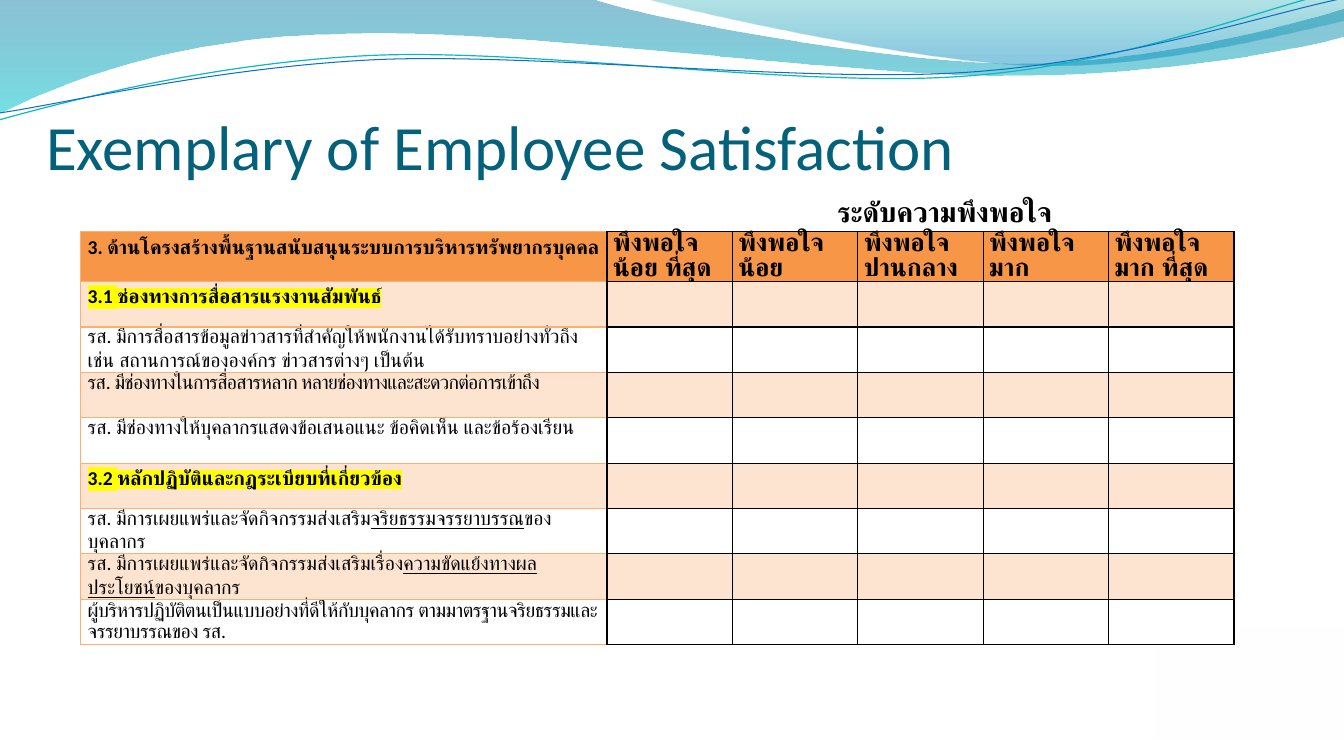
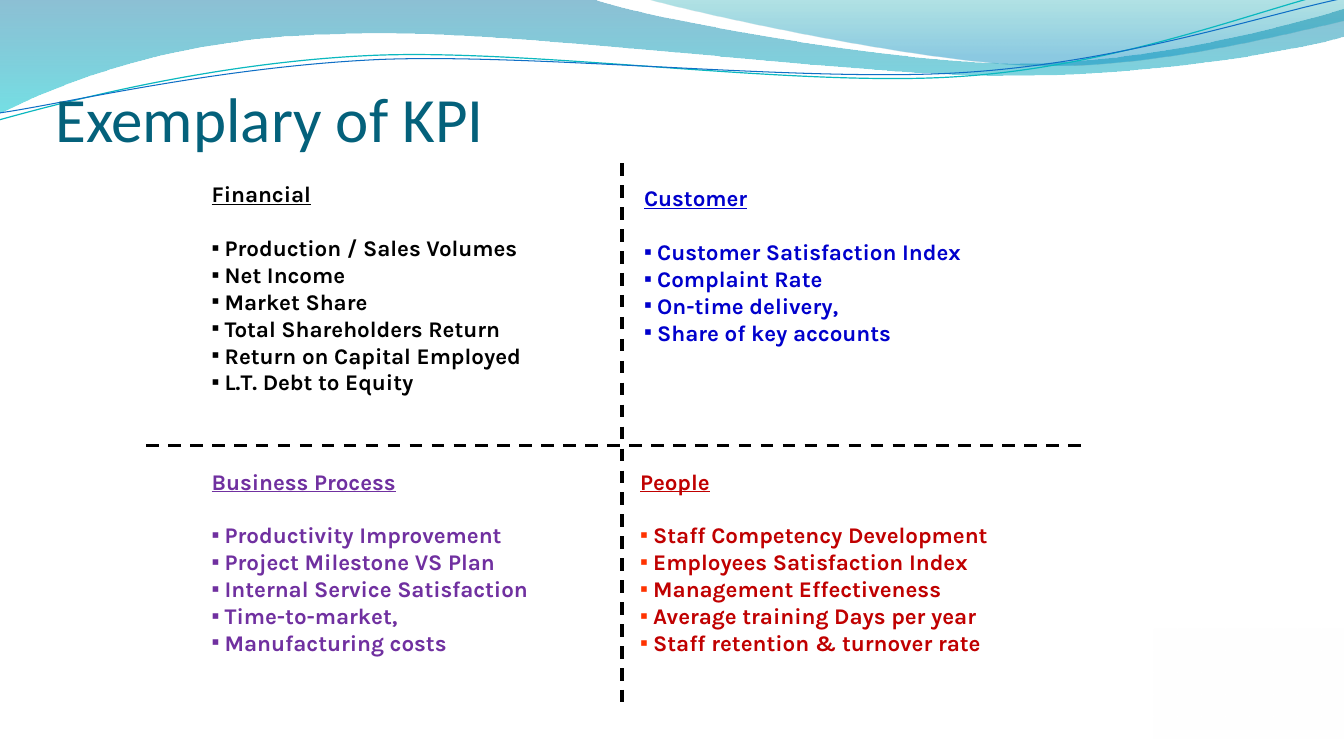
import math
import pptx
import pptx.dml.color
import pptx.enum.dml
import pptx.enum.lang
import pptx.enum.shapes
import pptx.enum.text
import pptx.oxml.ns
import pptx.util
from dataclasses import dataclass
from lxml import etree

Inches, Pt = pptx.util.Inches, pptx.util.Pt
RGB = pptx.dml.color.RGBColor.from_string
ANCHOR = pptx.enum.text.MSO_ANCHOR
ALIGN = pptx.enum.text.PP_ALIGN
THAI = pptx.enum.lang.MSO_LANGUAGE_ID.THAI
qn = pptx.oxml.ns.qn


@dataclass(frozen=True)
class Theme:
    title: str = "04617B"
    ink: str = "000000"
    paper: str = "FFFFFF"
    head: str = "F79646"
    band: str = "FDE4D0"
    edge: str = "F9B074"
    mark: str = "FFFF00"
    blue: str = "0000CC"
    plum: str = "7030A0"
    red: str = "C00000"
    spot: str = "FF3300"
    sans: str = "Calibri"
    serif: str = "Cambria"
    list: str = "Karla"
    bullet: str = "Arial"
    big: int = 45
    sub: int = 20
    level: int = 18
    body: int = 16
    small: int = 14


T = Theme()

# Each wave: start point, then straight (2 numbers) or cubic (6 numbers) steps,
# then gradient stops as position, colour, opacity
WAVES = [
    ([(0, 0), (5.87, -0.01), (6.34, 0.17, 8.85, 0.63, 10.11, 0.63),
      (11.38, 0.63, 12.78, 0.26, 13.33, 0.09), (13.35, 0.36),
      (13.11, 0.44, 11.6, 0.76, 9.94, 0.75), (8.29, 0.75, 5.09, 0.28, 3.43, 0.34),
      (1.72, 0.36, 0.61, 0.83, -0.01, 1.13), (0, 0)],
     [(0, "0074A1", 45), (1, "00C6CF", 55)]),
    ([(6.39, -0.01), (6.79, 0.11, 9.09, 0.62, 10.25, 0.65),
      (11.41, 0.69, 12.82, 0.32, 13.33, 0.21), (13.33, 0), (6.39, -0.01)],
     [(0, "00A1A9", 30), (0.8, "008BBF", 45)]),
]
# Each thread: points, colour, width, centre of its turn
THREADS = [
    ([(-0.01, 1.19), (0.64, 1.01, 2.11, 0.62, 3.69, 0.55),
      (5.27, 0.48, 7.9, 0.87, 9.5, 0.76), (11.1, 0.66, 12.52, 0.08, 13.31, -0.1)],
     "0AB8BF", 0.85, (6.65, 0.58)),
    ([(0, 1.12), (0.63, 1.03, 2.18, 0.66, 3.78, 0.59),
      (5.37, 0.53, 7.96, 0.82, 9.55, 0.72), (11.15, 0.62, 12.55, 0.14, 13.34, -0.02)],
     "0F6FC6", 0.75, (6.67, 0.59)),
]
TILT = 2.7


def put(item, **vals):
    """Set several attributes of one object."""
    for name, val in vals.items():
        setattr(item, name, val)


def turn(steps, mid):
    """Turn all points by TILT degrees about mid."""
    cos, sin = math.cos(math.radians(TILT)), math.sin(math.radians(TILT))
    out = []
    for step in steps:
        flat = []
        for x, y in zip(step[::2], step[1::2]):
            dx, dy = x - mid[0], y - mid[1]
            flat += [mid[0] + dx * cos - dy * sin, mid[1] + dx * sin + dy * cos]
        out.append(flat)
    return out


class Deck:
    def __init__(self):
        self.file = pptx.Presentation()
        put(self.file, slide_width=Inches(13.33), slide_height=Inches(7.5))
        self.slide = None

    def page(self, title, x, y, w):
        self.slide = self.file.slides.add_slide(self.file.slide_layouts[6])
        for steps, stops in WAVES:
            self.fade(self.curve(steps, True), stops)
        for steps, color, width, mid in THREADS:
            shape = self.curve(turn(steps, mid), False)
            shape.rotation = 360 - TILT
            shape.fill.background()
            shape.line.color.rgb = RGB(color)
            shape.line.width = Pt(width)
        veil = self.slide.shapes.add_shape(
            pptx.enum.shapes.MSO_SHAPE.RECTANGLE, *map(Inches, (11.44, 6.24, 1.9, 1.09)))
        self.fade(veil, [(0, T.paper, 40), (1, T.paper, 70)])
        par = self.box(x, y, w, 0.78).paragraphs[0]
        par.line_spacing = 0.9
        self.run(par, title, T.big, T.sans, T.title)

    def curve(self, steps, close):
        """Draw an outline, joining each three points of a cubic step."""
        pts = [(Inches(x), Inches(y)) for step in steps
               for x, y in zip(step[::2], step[1::2])]
        form = self.slide.shapes.build_freeform(*pts[0])
        form.add_line_segments(pts[1:], close=close)
        shape = form.convert_to_shape()
        shape.shadow.inherit = False
        legs = iter(list(shape._element.iter(qn("a:lnTo"))))
        for step in steps[1:]:
            leg = next(legs)
            if len(step) == 6:
                bend = etree.Element(qn("a:cubicBezTo"))
                leg.addprevious(bend)
                for part in (leg, next(legs), next(legs)):
                    bend.append(part[0])
                    part.getparent().remove(part)
        return shape

    def fade(self, shape, stops):
        """Fill a shape from top to bottom with partly clear colours."""
        shape.shadow.inherit = False
        shape.line.fill.background()
        shape.fill.gradient()
        shape.fill.gradient_angle = 270
        for stop, (pos, color, _) in zip(shape.fill.gradient_stops, stops):
            stop.position = pos
            stop.color.rgb = RGB(color)
        tones = list(shape._element.spPr.iter(qn("a:srgbClr")))
        for tone, (_, _, clear) in zip(tones, stops):
            etree.SubElement(tone, qn("a:alpha")).set("val", str(clear * 1000))

    def box(self, x, y, w, h, **vals):
        frame = self.slide.shapes.add_textbox(*map(Inches, (x, y, w, h))).text_frame
        put(frame, word_wrap=True, **vals)
        return frame

    def run(self, par, text, size, name, color, mark=None, space=0, **vals):
        run = par.add_run()
        run.text = text
        put(run.font, size=Pt(size), name=name, **vals)
        run.font.color.rgb = RGB(color)
        props = run.font._element
        if space:
            props.set("spc", str(space))
        if mark:
            glow = etree.Element(qn("a:highlight"))
            etree.SubElement(glow, qn("a:srgbClr")).set("val", mark)
            props.find(qn("a:latin")).addprevious(glow)

    def bullet(self, par, color):
        props = par._p.get_or_add_pPr()
        hang = Inches(0.13)
        props.set("marL", str(hang))
        props.set("indent", str(-hang))
        tint = etree.SubElement(props, qn("a:buClr"))
        etree.SubElement(tint, qn("a:srgbClr")).set("val", color)
        etree.SubElement(props, qn("a:buFont")).set("typeface", T.bullet)
        etree.SubElement(props, qn("a:buChar")).set("char", "▪")

    def group(self, x, y, w, h, head, items, color, spot=None):
        """Place one underlined heading with its bullet list."""
        frame = self.box(x, y, w, h, margin_top=Inches(0.02), margin_bottom=Inches(0.02),
                         vertical_anchor=ANCHOR.TOP)
        par = frame.paragraphs[0]
        par.space_after = Pt(19.2)
        self.run(par, head, T.body, T.list, color, bold=True, underline=True)
        for item in items:
            par = frame.add_paragraph()
            self.bullet(par, spot or color)
            self.run(par, item, T.body, T.list, color, bold=True)

    def dash(self, x1, y1, x2, y2):
        line = self.slide.shapes.add_connector(
            pptx.enum.shapes.MSO_CONNECTOR.STRAIGHT, *map(Inches, (x1, y1, x2, y2)))
        put(line.line, width=Pt(2.25), dash_style=pptx.enum.dml.MSO_LINE.DASH)
        line.line.color.rgb = RGB(T.ink)
        etree.SubElement(line._element.spPr, qn("a:effectLst"))

    def cell(self, cell, fill, side, edge):
        put(cell, margin_left=Inches(side), margin_right=Inches(side),
            margin_top=0, margin_bottom=0)
        cell.fill.solid()
        cell.fill.fore_color.rgb = RGB(fill)
        props = cell._tc.get_or_add_tcPr()
        for i, (tag, color) in enumerate(zip("LRTB", (edge, T.ink, edge, edge))):
            line = etree.Element(qn("a:ln" + tag), w=str(Pt(1)))
            solid = etree.SubElement(line, qn("a:solidFill"))
            etree.SubElement(solid, qn("a:srgbClr")).set("val", color)
            props.insert(i, line)

    def grid(self, x, y, w, first, levels, rows):
        """Draw the survey table: one wide question column, then the levels."""
        tall = [0.49] + [0.45] * (len(rows) - 1)
        table = self.slide.shapes.add_table(
            len(rows), len(levels) + 1,
            *map(Inches, (x, y, w, sum(tall)))).table
        for i, col in enumerate(table.columns):
            col.width = Inches((w - first) / len(levels) if i else first)
        for r, (kind, text, space) in enumerate(rows):
            table.rows[r].height = Inches(tall[r])
            fill = T.head if r == 0 else T.band if r % 2 else T.paper
            for c in range(len(levels) + 1):
                cell = table.cell(r, c)
                self.cell(cell, fill, 0.06 if c else 0.07, T.ink if c else T.edge)
                par = cell.text_frame.paragraphs[0]
                if c == 0:
                    par.line_spacing = Pt(15.8) if kind == "item" else 1.15
                    for i, part in enumerate(text.split("_")):
                        self.run(par, part, T.small, T.sans, T.ink, space=space,
                                 mark=T.mark if kind == "part" else None,
                                 bold=kind != "item", underline=i % 2 == 1,
                                 language_id=THAI)
                elif r == 0:
                    par.line_spacing = Pt(17.8)
                    self.run(par, levels[c - 1], T.level, T.serif, T.ink,
                             bold=True, language_id=THAI)


# Row kind, text (underlined between _ marks), letter spacing
ROWS = [
    ("head", "3. ด้านโครงสร้างพื้นฐานสนับสนุนระบบการบริหารทรัพยากรบุคคล", 0),
    ("part", "3.1 ช่องทางการสื่อสารแรงงานสัมพันธ์", 0),
    ("item", "รส. มีการสื่อสารข้อมูลข่าวสารที่สำคัญให้พนักงานได้รับทราบอย่างทั่วถึง "
             "เช่น สถานการณ์ขององค์กร ข่าวสารต่างๆ เป็นต้น", 0),
    ("item", "รส. มีช่องทางในการสื่อสารหลาก หลายช่องทางและสะดวกต่อการเข้าถึง", -50),
    ("item", "รส. มีช่องทางให้บุคลากรแสดงข้อเสนอแนะ ข้อคิดเห็น และข้อร้องเรียน", 0),
    ("part", "3.2 หลักปฏิบัติและกฎระเบียบที่เกี่ยวข้อง", 0),
    ("item", "รส. มีการเผยแพร่และจัดกิจกรรมส่งเสริม_จริยธรรมจรรยาบรรณ_ของบุคลากร", 0),
    ("item", "รส. มีการเผยแพร่และจัดกิจกรรมส่งเสริมเรื่อง"
             "_ความขัดแย้งทางผลประโยชน์_ของบุคลากร", 0),
    ("item", "ผู้บริหารปฏิบัติตนเป็นแบบอย่างที่ดีให้กับบุคลากร "
             "ตามมาตรฐานจริยธรรมและจรรยาบรรณของ รส.", -30),
]
LEVELS = ["พึงพอใจ" + word for word in
          ("น้อย ที่สุด", "น้อย", "ปานกลาง", "มาก", "มาก ที่สุด")]


def main():
    deck = Deck()
    deck.page("Exemplary of Employee Satisfaction", 0.36, 1.1, 12.67)
    deck.grid(0.8, 2.3, 11.44, 5.22, LEVELS, ROWS)
    par = deck.box(6.99, 1.91, 4.76, 0.37, vertical_anchor=ANCHOR.MIDDLE).paragraphs[0]
    par.alignment = ALIGN.CENTER
    deck.run(par, "ระดับความพึงพอใจ", T.sub, T.serif, T.ink, bold=True, language_id=THAI)

    deck.page("Exemplary of KPI", 0.45, 0.82, 8.69)
    deck.group(6.29, 1.81, 4.54, 1.64, "Customer",
               ["Customer Satisfaction Index", "Complaint Rate", "On-time delivery,",
                "Share of key accounts"], T.blue)
    deck.group(2, 4.62, 4.58, 2.44, "Business Process",
               ["Productivity Improvement", "Project Milestone VS Plan",
                "Internal Service Satisfaction", "Time-to-market,",
                "Manufacturing costs"], T.plum)
    deck.group(2, 1.77, 4.58, 2.18, "Financial",
               ["Production / Sales Volumes", "Net Income", "Market Share",
                "Total Shareholders Return", "Return on Capital Employed",
                "L.T. Debt to Equity"], T.ink)
    deck.dash(1.45, 4.42, 10.72, 4.42)
    deck.dash(6.17, 1.62, 6.17, 6.96)
    deck.group(6.25, 4.62, 5.08, 2.18, "People",
               ["Staff Competency Development", "Employees Satisfaction Index",
                "Management Effectiveness", "Average training Days per year",
                "Staff retention & turnover rate"], T.red, T.spot)
    deck.file.save("out.pptx")


if __name__ == "__main__":
    main()
